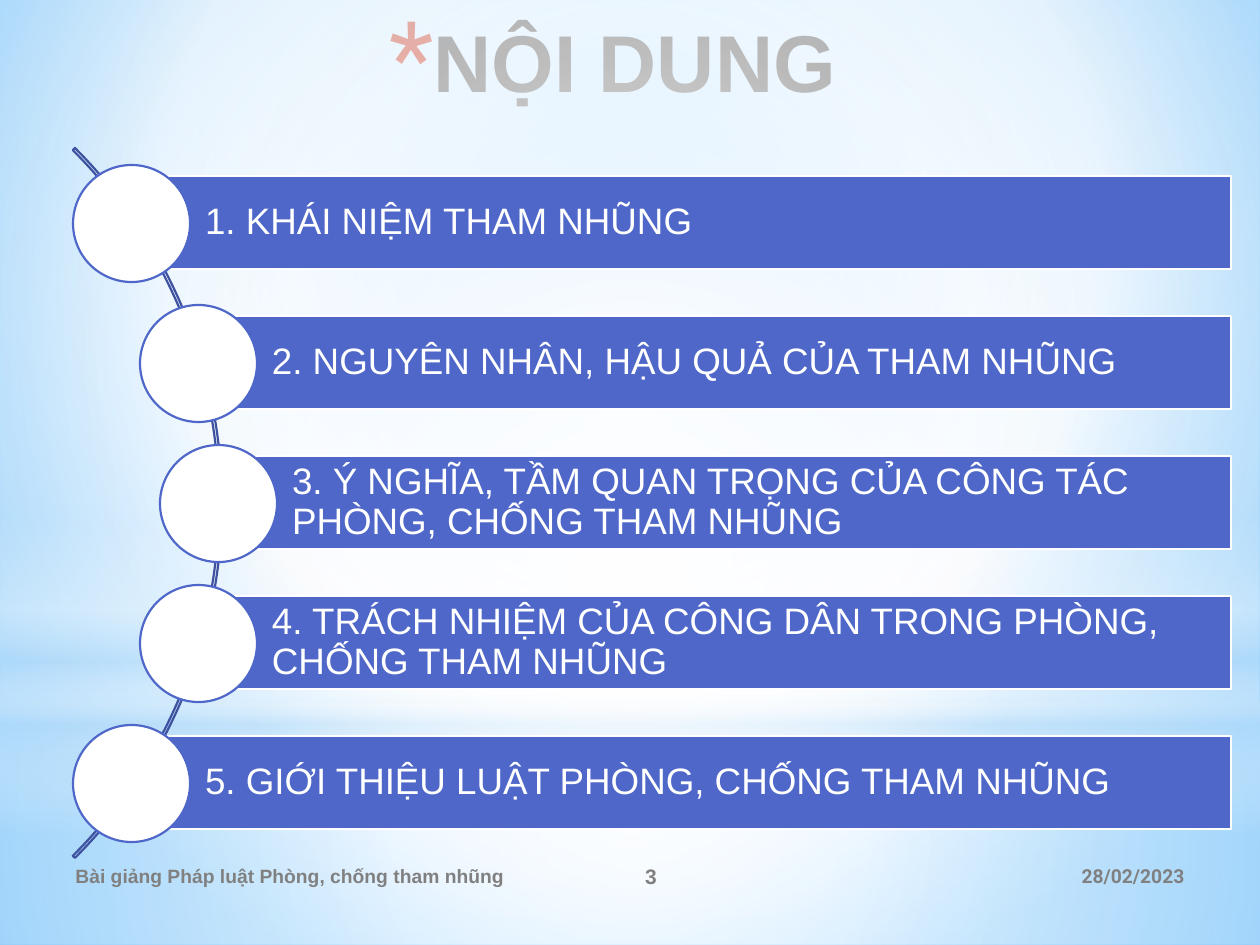
"""Build the contents slide of a lecture on anti-corruption law."""
from lxml import etree
from pptx import Presentation, util as u
from pptx.dml.color import RGBColor
from pptx.enum import shapes, text
from pptx.oxml import parse_xml
from pptx.oxml.ns import nsdecls, qn

SCALE = 914400 / 126
WHITE = RGBColor(0xFF, 0xFF, 0xFF)
SKY = RGBColor(0xB4, 0xDC, 0xFA)
PALE_BLUE = RGBColor(0x9E, 0xD5, 0xFF)
BRIGHT_BLUE = RGBColor(0x5B, 0xB9, 0xFF)
BLUE = RGBColor(0x4E, 0x67, 0xC8)
DARK_BLUE = RGBColor(0x3E, 0x52, 0xA0)
GREY = RGBColor(0x80, 0x80, 0x80)
CHARCOAL = RGBColor(0x40, 0x40, 0x40)
RED = RGBColor(0xC3, 0x26, 0x0C)
CENTRE = (50, 50, 50, 50)


def px(*lengths):
    return [round(length * SCALE) for length in lengths]


def set_gradient(parent, stops, focus=None):
    stop_xml = "".join(
        f'<a:gs pos="{position * 1000}"><a:srgbClr val="{color}">'
        f'<a:alpha val="{opacity * 1000}"/></a:srgbClr></a:gs>'
        for position, color, opacity in stops)
    if focus:
        left, top, right, bottom = (side * 1000 for side in focus)
        direction = (f'<a:path path="circle"><a:fillToRect l="{left}" t="{top}" '
                     f'r="{right}" b="{bottom}"/></a:path>')
    else:
        direction = '<a:lin ang="5400000" scaled="0"/>'
    gradient = parse_xml(f'<a:gradFill {nsdecls("a")} rotWithShape="1">'
                         f'<a:gsLst>{stop_xml}</a:gsLst>{direction}</a:gradFill>')
    parent.replace(parent.find(qn("a:solidFill")), gradient)


presentation = Presentation()
presentation.slide_width, presentation.slide_height = px(1260, 945)
slide = presentation.slides.add_slide(presentation.slide_layouts[5])

slide.background.fill.solid()
set_gradient(slide.element.find(".//" + qn("p:bgPr")),
             [(0, PALE_BLUE, 100), (60, WHITE, 100), (100, BRIGHT_BLUE, 100)],
             (20, 10, 20, 60))

RECTANGLE = shapes.MSO_SHAPE.RECTANGLE
OVAL = shapes.MSO_SHAPE.OVAL
glows = [
    (RECTANGLE, 703, 242, [(0, WHITE, 91), (37, WHITE, 76), (100, SKY, 79)], CENTRE),
    (RECTANGLE, 0, 703, [(0, WHITE, 89), (48, WHITE, 62), (100, SKY, 79)], CENTRE),
    (RECTANGLE, 519, 315, [(0, WHITE, 0), (29, WHITE, 30), (45, SKY, 40),
                           (55, WHITE, 26), (65, SKY, 60), (100, WHITE, 0)], None),
    (OVAL, 220, 703, [(0, WHITE, 100), (56, WHITE, 0)], CENTRE),
]
for kind, top, height, stops, focus in glows:
    glow = slide.shapes.add_shape(kind, *px(0, top, 1260, height))
    glow.shadow.inherit = False
    glow.line.fill.background()
    glow.fill.solid()
    set_gradient(glow.element.spPr, stops, focus)

footers = [
    ("28/02/2023", 851, 346, text.PP_ALIGN.RIGHT, 11, "Roboto"),
    ("Bài giảng Pháp luật Phòng, chống tham nhũng", 63, 462, text.PP_ALIGN.LEFT, 11, "Arial"),
    ("3", 525, 252, text.PP_ALIGN.CENTER, 12, "Arial"),
]
for wording, left, width, alignment, size, font_name in footers:
    footer = slide.shapes.add_textbox(*px(left, 851, width, 50))
    footer.text_frame.word_wrap = True
    footer.text_frame.vertical_anchor = text.MSO_ANCHOR.MIDDLE
    footer.text_frame.text = wording
    paragraph = footer.text_frame.paragraphs[0]
    paragraph.alignment = alignment
    font = paragraph.runs[0].font
    font.name, font.size, font.bold = font_name, u.Pt(size), True
    font.color.rgb = GREY

title = slide.shapes.title
title.left, title.top, title.width, title.height = px(164, 6, 897, 158)
title.text_frame.text = "NỘI DUNG"
title.text_frame.vertical_anchor = text.MSO_ANCHOR.TOP
title.text_frame.auto_size = text.MSO_AUTO_SIZE.NONE
paragraph = title.text_frame.paragraphs[0]
paragraph.alignment = text.PP_ALIGN.CENTER
font = paragraph.runs[0].font
font.name, font.size, font.bold = "Arial", u.Pt(46), True
font.color.rgb = CHARCOAL
properties = paragraph._p.get_or_add_pPr()
indent = px(44)[0]
properties.set("marL", str(indent))
properties.set("indent", str(-indent))
bullet_color = etree.SubElement(properties, qn("a:buClr"))
etree.SubElement(bullet_color, qn("a:srgbClr"), val=str(RED))
etree.SubElement(properties, qn("a:buSzPct"), val="128000")
etree.SubElement(properties, qn("a:buFont"), typeface="Roboto")
etree.SubElement(properties, qn("a:buChar"), char="*")

arc = slide.shapes.add_shape(shapes.MSO_SHAPE.BLOCK_ARC, *px(-782, 1, 1004, 1004))
for index, adjustment in enumerate((189, 27, 0.003)):
    arc.adjustments[index] = adjustment
arc.shadow.inherit = False
arc.fill.background()
arc.line.color.rgb = DARK_BLUE
arc.line.width = u.Pt(1.25)

topics = [
    (131, "1. KHÁI NIỆM THAM NHŨNG"),
    (198, "2. NGUYÊN NHÂN, HẬU QUẢ CỦA THAM NHŨNG"),
    (218, "3. Ý NGHĨA, TẦM QUAN TRỌNG CỦA CÔNG TÁC PHÒNG, CHỐNG THAM NHŨNG"),
    (198, "4. TRÁCH NHIỆM CỦA CÔNG DÂN TRONG PHÒNG, CHỐNG THAM NHŨNG"),
    (131, "5. GIỚI THIỆU LUẬT PHÒNG, CHỐNG THAM NHŨNG"),
]
for row, (left, wording) in enumerate(topics):
    top = 176 + 140 * row
    bar = slide.shapes.add_shape(RECTANGLE, *px(left, top, 1231 - left, 93))
    circle = slide.shapes.add_shape(OVAL, *px(left - 58, top - 11, 117, 117))
    for shape, fill, line in ((bar, BLUE, WHITE), (circle, WHITE, BLUE)):
        shape.shadow.inherit = False
        shape.fill.solid()
        shape.fill.fore_color.rgb = fill
        shape.line.color.rgb = line
        shape.line.width = u.Pt(1.25)
    frame = bar.text_frame
    frame.word_wrap = True
    frame.vertical_anchor = text.MSO_ANCHOR.MIDDLE
    frame.margin_left, frame.margin_top, frame.margin_right, frame.margin_bottom = px(74, 8, 8, 8)
    frame.text = wording
    paragraph = frame.paragraphs[0]
    paragraph.alignment = text.PP_ALIGN.LEFT
    paragraph.line_spacing = 0.9
    font = paragraph.runs[0].font
    font.name, font.size = "Arial", u.Pt(21)
    font.color.rgb = WHITE

presentation.save("out.pptx")
